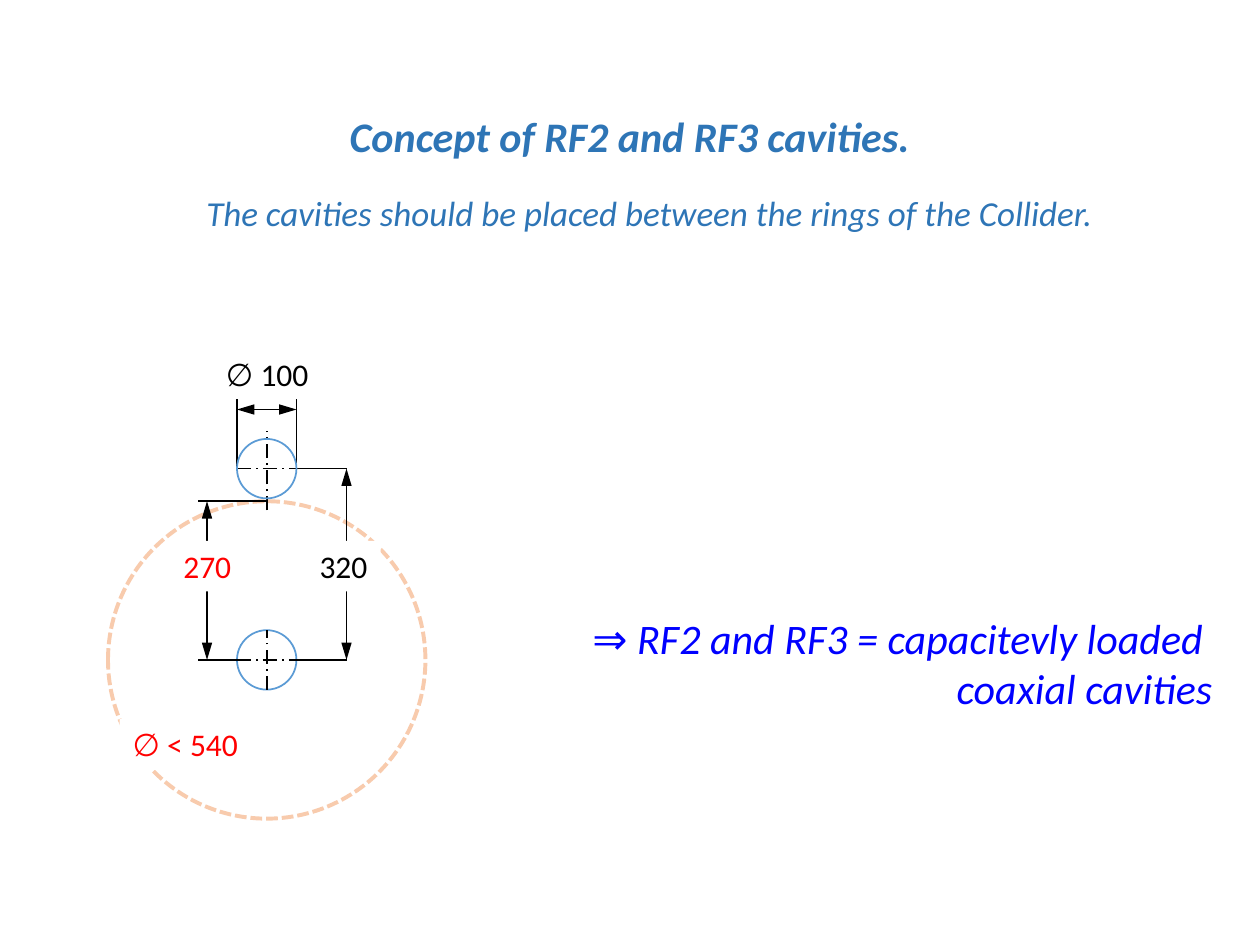
from pptx import Presentation
from pptx.dml.color import RGBColor
from pptx.enum.dml import MSO_LINE
from pptx.enum.shapes import MSO_CONNECTOR, MSO_SHAPE
from pptx.enum.text import MSO_ANCHOR, MSO_AUTO_SIZE, PP_ALIGN
from pptx.oxml.ns import qn
from pptx.util import Pt
from lxml.etree import SubElement

BLACK, WHITE, RED, BLUE = "000000", "FFFFFF", "FF0000", "0000FF"
TITLE, TUBE, RING = "2E75B6", "5B9BD5", "F8CBAD"

# Axis, tube centres, and radii of the tubes and the cavity
MID, HIGH, LOW = 152.4, 267.8, 377.1
TUBE_R, RING_R = 17, 90.7
LEFT, RIGHT = MID - TUBE_R, MID + TUBE_R
CREST = LOW - RING_R
FAR, NEAR = 198, 113  # outer ends of the extension lines
DIM_L, DIM_Y, EXT_Y = 118.3, 234, 228.2

# x, y, radius, fill, line, width, dash
CIRCLES = [
    (MID, LOW, RING_R, None, RING, 2.25, MSO_LINE.SQUARE_DOT),
    (MID, LOW, TUBE_R, WHITE, TUBE, 1, None),
]
TOP_TUBE = (MID, HIGH, TUBE_R, None, TUBE, 1, None)

# x1, y1, x2, y2
AXES = [
    (LEFT, HIGH, RIGHT, HIGH),
    (LEFT, LOW, RIGHT, LOW),
    (MID, 291.6, MID, 246.2),
    (MID, LOW + TUBE_R, MID, LOW - TUBE_R),
]
EXTENTS = [
    (RIGHT, HIGH, FAR, HIGH),
    (RIGHT, LOW, FAR, LOW),
    (RIGHT, EXT_Y, RIGHT, HIGH),
    (LEFT, EXT_Y, LEFT, HIGH),
    (MID, CREST, NEAR, CREST),
    (LEFT, LOW, NEAR, LOW),
]
SPANS = [
    (FAR, LOW, FAR, HIGH),
    (LEFT, DIM_Y, RIGHT, DIM_Y),
    (DIM_L, LOW, DIM_L, CREST),
]

# text, box, colour, fill
LABELS = [
    ("320", (175, 309, 42.5, 29), BLACK, WHITE),
    ("270", (97.2, 309, 42.5, 29), RED, WHITE),
    ("∅ < 540", (68.4, 411, 75, 29), RED, WHITE),
    ("∅ 100", (120.2, 199.4, 65, 29), BLACK, None),
]

# runs of (text, font values), box, alignment
TEXTS = [
    ([("The cavities should be placed between the rings of the Collider.",
       dict(size=Pt(20), italic=True))],
     (31, 105.8, 680.4, 31.7), TITLE, PP_ALIGN.CENTER),
    ([("⇒ ", dict(size=Pt(24))),
      ("RF2 and RF3 = capacitevly loaded  coaxial cavities",
       dict(size=Pt(24), italic=True))],
     (257.8, 346.3, 442, 65.5), BLUE, PP_ALIGN.RIGHT),
    ([("Concept of RF2 and RF3 cavities.",
       dict(size=Pt(24), bold=True, italic=True))],
     (8.6, 59.8, 702.7, 36), TITLE, PP_ALIGN.CENTER),
]


def rgb(code):
    return RGBColor.from_string(code)


def paint(shape, fill):
    if fill:
        shape.fill.solid()
        shape.fill.fore_color.rgb = rgb(fill)
    else:
        shape.fill.background()


def stroke(line, color, width, dash=None):
    line.color.rgb = rgb(color)
    line.width = Pt(width)
    if dash:
        line.dash_style = dash


def circle(x, y, r, fill, color, width, dash):
    shape = shapes.add_shape(MSO_SHAPE.OVAL, Pt(x - r), Pt(y - r),
                             Pt(2 * r), Pt(2 * r))
    shape.shadow.inherit = False
    paint(shape, fill)
    stroke(shape.line, color, width, dash)


def rule(ends, dash=None, arrows=False):
    """Draw a thin black line, with arrowheads at both ends if asked."""
    link = shapes.add_connector(MSO_CONNECTOR.STRAIGHT, *map(Pt, ends))
    stroke(link.line, BLACK, 1, dash)
    if arrows:
        for tag in ("a:headEnd", "a:tailEnd"):
            SubElement(link.line._get_or_add_ln(), qn(tag),
                       type="triangle", w="med", len="lg")
    SubElement(link._element.spPr, qn("a:effectLst"))


def write(runs, box, color, align, fill=None, wrap=True):
    shape = shapes.add_textbox(*map(Pt, box))
    paint(shape, fill)
    frame = shape.text_frame
    frame.word_wrap = wrap
    frame.auto_size = MSO_AUTO_SIZE.SHAPE_TO_FIT_TEXT
    frame.vertical_anchor = MSO_ANCHOR.TOP
    para = frame.paragraphs[0]
    para.alignment = align
    for text, style in runs:
        run = para.add_run()
        run.text = text
        run.font.color.rgb = rgb(color)
        for key, value in {"name": "Calibri", **style}.items():
            setattr(run.font, key, value)


deck = Presentation()
deck.slide_width, deck.slide_height = Pt(720), Pt(540)
shapes = deck.slides.add_slide(deck.slide_layouts[6]).shapes

for item in CIRCLES:
    circle(*item)
for ends in AXES:
    rule(ends, dash=MSO_LINE.LONG_DASH_DOT)
for ends in EXTENTS:
    rule(ends)
for ends in SPANS:
    rule(ends, arrows=True)
for text, box, color, fill in LABELS:
    write([(text, dict(size=Pt(18)))], box, color, PP_ALIGN.CENTER, fill,
          wrap=False)
for item in TEXTS:
    write(*item)
circle(*TOP_TUBE)

deck.save("out.pptx")
